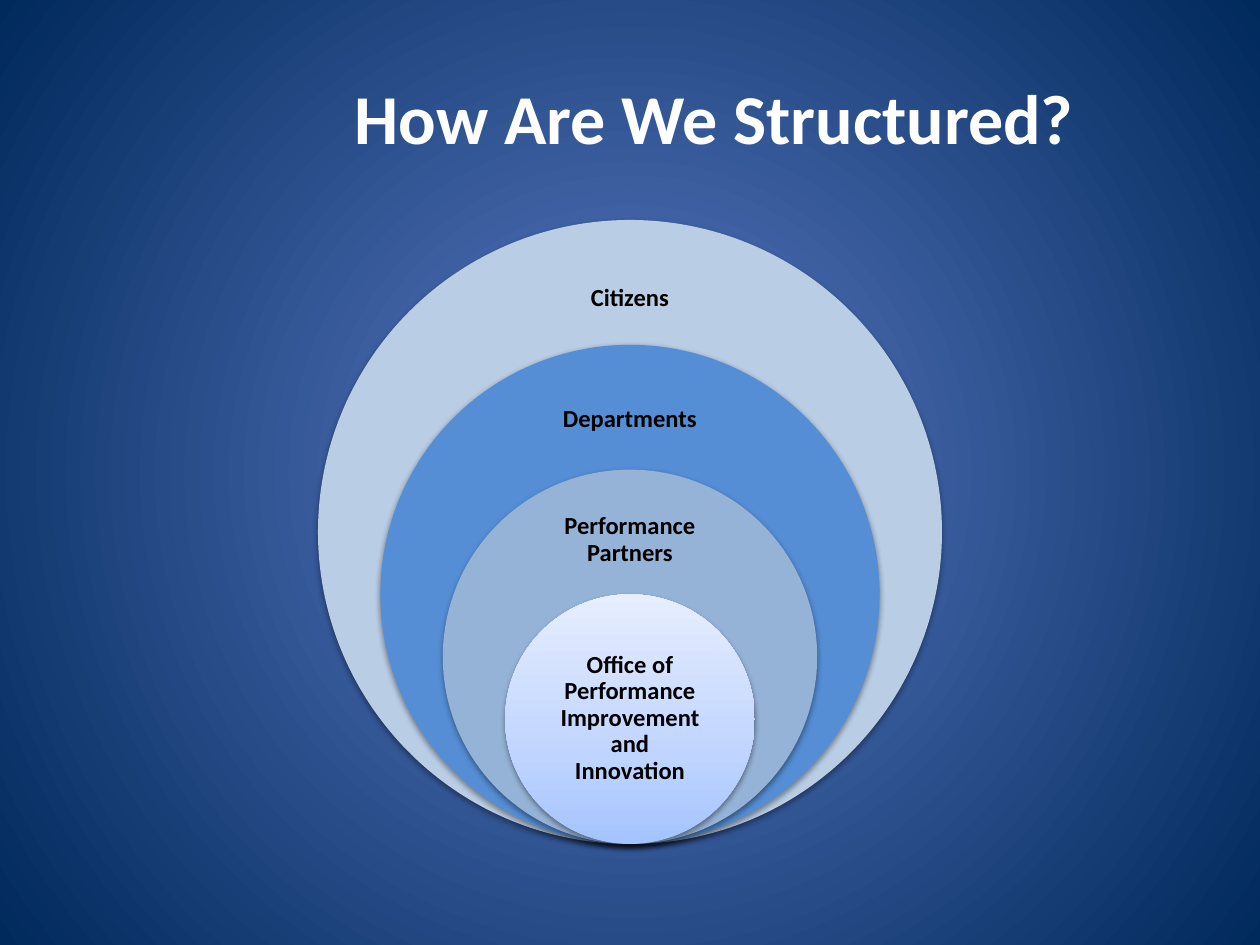
import pptx
import pptx.util
import pptx.dml.color
import pptx.enum.shapes
import pptx.enum.text
import pptx.oxml
import pptx.oxml.ns

PX = 914400 / 126
FONT = "Calibri"
CENTER_X, BASE_Y, OUTER = 630, 844, 624

# Text, fill, label top, label width, label height; outermost ring first
RINGS = [
    ("Citizens", "B9CDE5", 252, 174, 93),
    ("Departments", "558ED5", 375, 174, 89),
    ("Performance Partners", "95B3D7", 498, 174, 84),
    ("Office of Performance Improvement and Innovation",
     [(0, "A4C4FF"), (35, "BFD4FF"), (100, "E6EEFF")], 656, 176, 125),
]


def px(n):
    return pptx.util.Emu(round(n * PX))


def box(x, y, w, h):
    return px(x), px(y), px(w), px(h)


def rgb(value):
    return pptx.dml.color.RGBColor.from_string(value)


def xml(body):
    """Parse one DrawingML element."""
    tag, rest = body.split(" ", 1)
    return pptx.oxml.parse_xml(f"<a:{tag} {pptx.oxml.ns.nsdecls('a')} {rest}")


def set_gradient(parent, stops, direction):
    """Swap the solid fill inside parent for a gradient."""
    gs = "".join(f'<a:gs pos="{pos * 1000}"><a:srgbClr val="{c}"/></a:gs>'
                 for pos, c in stops)
    solid = parent.find(pptx.oxml.ns.qn("a:solidFill"))
    parent.replace(solid, xml(
        f'gradFill rotWithShape="1"><a:gsLst>{gs}</a:gsLst>{direction}</a:gradFill>'))


def set_background(s):
    s.background.fill.solid()
    s.background.fill.fore_color.rgb = rgb("00295C")
    set_gradient(s.element.find(".//" + pptx.oxml.ns.qn("p:bgPr")),
                 [(0, "5E7CC5"), (100, "00295C")],
                 '<a:path path="circle"><a:fillToRect l="50000" t="50000" '
                 'r="50000" b="50000"/></a:path>')


def add_text(tf, text, size, color):
    tf.word_wrap = True
    tf.vertical_anchor = pptx.enum.text.MSO_ANCHOR.MIDDLE
    p = tf.paragraphs[0]
    p.alignment = pptx.enum.text.PP_ALIGN.CENTER
    r = p.add_run()
    r.text = text
    r.font.name = FONT
    r.font.size = pptx.util.Pt(size)
    r.font.bold = True
    r.font.color.rgb = rgb(color)
    return p


def add_title(s, text):
    sp = s.shapes.title
    sp.left, sp.top, sp.width, sp.height = box(231, 38, 966, 158)
    add_text(sp.text_frame, text, 40, "FFFFFF")


def add_circle(s, diameter, fill):
    sp = s.shapes.add_shape(
        pptx.enum.shapes.MSO_SHAPE.OVAL,
        *box(CENTER_X - diameter / 2, BASE_Y - diameter, diameter, diameter))
    sp.line.fill.background()
    sp.fill.solid()
    spPr = sp.element.spPr
    if isinstance(fill, str):
        sp.fill.fore_color.rgb = rgb(fill)
    else:
        set_gradient(spPr, fill, '<a:lin ang="16200000" scaled="0"/>')
    # Soft shadow straight below
    sp.shadow.inherit = False
    spPr.find(pptx.oxml.ns.qn("a:effectLst")).append(xml(
        'outerShdw blurRad="40000" dist="20000" dir="5400000" rotWithShape="0">'
        '<a:srgbClr val="000000"><a:alpha val="38000"/></a:srgbClr></a:outerShdw>'))


def add_label(s, text, top, width, height):
    sp = s.shapes.add_textbox(*box(CENTER_X - width / 2, top, width, height))
    tf = sp.text_frame
    tf.margin_left = tf.margin_right = tf.margin_top = tf.margin_bottom = px(14)
    add_text(tf, text, 14, "000000").line_spacing = 0.9


def main():
    prs = pptx.Presentation()
    prs.slide_width, prs.slide_height = px(1260), px(945)
    s = prs.slides.add_slide(prs.slide_layouts[5])
    set_background(s)
    add_title(s, "How Are We Structured?")

    # Nested circles share a base; each is one fifth of the outer one smaller
    for i, (text, fill, top, width, height) in enumerate(RINGS):
        add_circle(s, OUTER * (5 - i) / 5, fill)
        add_label(s, text, top, width, height)

    prs.save("out.pptx")


if __name__ == "__main__":
    main()
